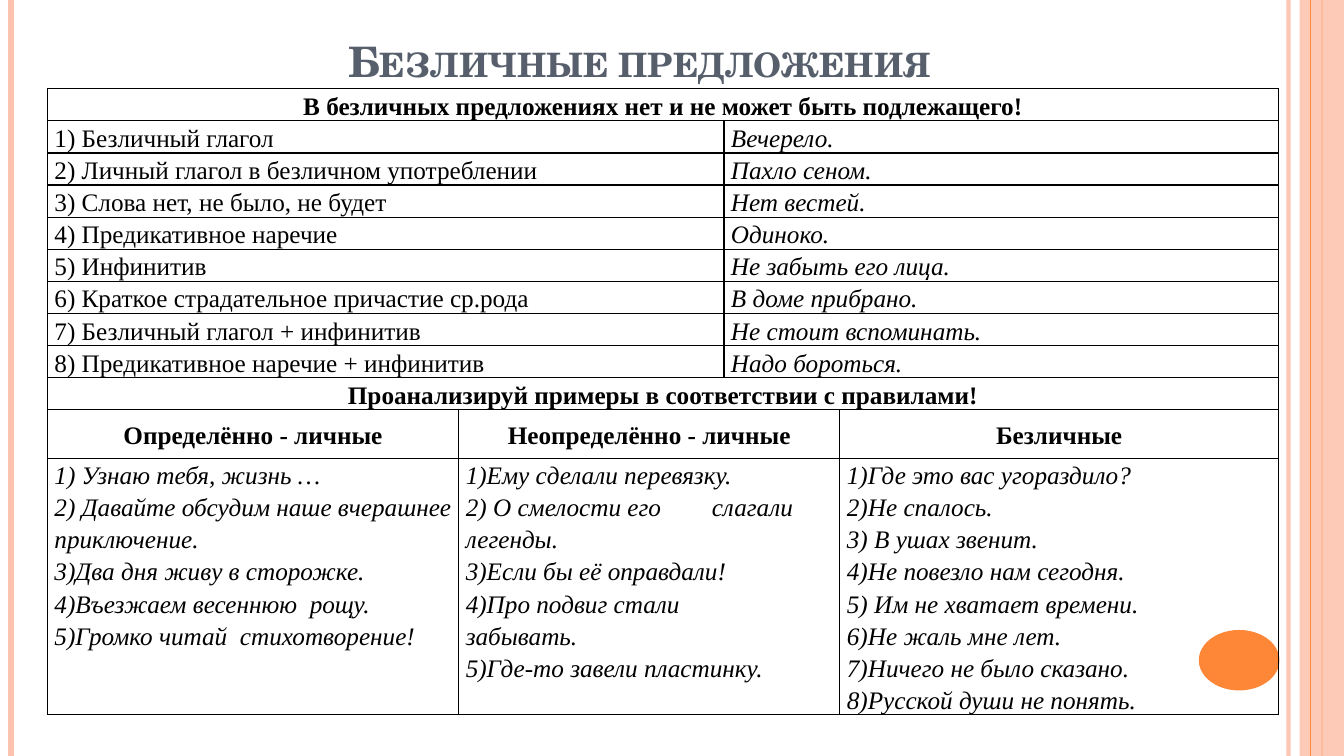
import pptx
import pptx.util
import pptx.dml.color
import pptx.enum.shapes
import pptx.enum.text
import lxml.etree
from pptx.util import Inches

NS = "http://schemas.openxmlformats.org/drawingml/2006/main"
ALIGN = pptx.enum.text.PP_ALIGN
ANCHOR = pptx.enum.text.MSO_ANCHOR
SHAPE = pptx.enum.shapes.MSO_SHAPE
PEACH, ORANGE = "FEC3AE", "FE8637"


def paint(color_format, value, opacity=100):
    color_format.rgb = pptx.dml.color.RGBColor.from_string(value)
    if opacity < 100:
        color = color_format._xFill.find(f"{{{NS}}}srgbClr")
        lxml.etree.SubElement(color, f"{{{NS}}}alpha", val=str(opacity * 1000))


def fill_cell(cell, lines, bold=False, italic=False, centered=False):
    cell.text_frame.text = "\n".join(lines)
    for para in cell.text_frame.paragraphs:
        para.line_spacing = 1.15
        para.alignment = ALIGN.CENTER if centered else ALIGN.LEFT
        if "\t" in para.text:
            tabs = lxml.etree.SubElement(para._p.get_or_add_pPr(), f"{{{NS}}}tabLst")
            lxml.etree.SubElement(tabs, f"{{{NS}}}tab", pos=str(Inches(2.44)), algn="l")
        for span in para.runs:
            span.font.name = "Times New Roman"
            span.font.size = pptx.util.Pt(18)
            span.font.bold = bold
            span.font.italic = italic
            paint(span.font.color, "000000")


deck = pptx.Presentation()
deck.slide_width = Inches(13.33)
deck.slide_height = Inches(7.5)
page = deck.slides.add_slide(deck.slide_layouts[5])

stripes = [
    (12.78, PEACH, 3, 93),
    (0.11, PEACH, 4.5, 100),
    (13.11, ORANGE, 1.5, 100),
    (13, ORANGE, 0.75, 100),
]
for x, color, width, opacity in stripes:
    stripe = page.shapes.add_connector(
        pptx.enum.shapes.MSO_CONNECTOR.STRAIGHT, Inches(x), 0, Inches(x), Inches(7.5)
    )
    stripe.line.width = pptx.util.Pt(width)
    stripe.line.fill.solid()
    stripe.line.color.rgb = pptx.dml.color.RGBColor.from_string(color)
    if opacity < 100:
        stripe_color = stripe._element.spPr.find(f".//{{{NS}}}srgbClr")
        lxml.etree.SubElement(stripe_color, f"{{{NS}}}alpha", val=str(opacity * 1000))
    lxml.etree.SubElement(stripe._element.spPr, f"{{{NS}}}effectLst")

decorations = [
    (SHAPE.RECTANGLE, 12.89, 0, 0.44, 7.5, PEACH, 87),
    (SHAPE.OVAL, 11.89, 6.25, 0.8, 0.6, ORANGE, 100),
]
for kind, left, top, width, height, color, opacity in decorations:
    decoration = page.shapes.add_shape(
        kind, Inches(left), Inches(top), Inches(width), Inches(height)
    )
    decoration.shadow.inherit = False
    decoration.line.fill.background()
    decoration.fill.solid()
    decoration.fill.fore_color.rgb = pptx.dml.color.RGBColor.from_string(color)
    if opacity < 100:
        shape_color = decoration._element.spPr.find(f".//{{{NS}}}srgbClr")
        lxml.etree.SubElement(shape_color, f"{{{NS}}}alpha", val=str(opacity * 1000))
last_stripe = page.shapes[4]._element
last_stripe.getparent().insert(-1, last_stripe)

title = page.shapes.title
title.left, title.top = Inches(0.9), Inches(0.26)
title.width, title.height = Inches(10.89), Inches(0.64)
title.text_frame.text = "Безличные предложения"
title.text_frame.vertical_anchor = ANCHOR.BOTTOM
title_para = title.text_frame.paragraphs[0]
title_para.alignment = ALIGN.CENTER
title_span = title_para.runs[0]
title_span.font.name = "TeX Gyre Schola"
title_span.font.size = pptx.util.Pt(30)
title_span.font.bold = True
paint(title_span.font.color, "575F6D")
title_span._r.get_or_add_rPr().set("cap", "small")

rules = [
    ("1) Безличный глагол", "Вечерело."),
    ("2) Личный глагол в безличном употреблении", "Пахло сеном."),
    ("3) Слова нет, не было, не будет", "Нет вестей."),
    ("4) Предикативное наречие", "Одиноко."),
    ("5) Инфинитив", "Не забыть его лица."),
    ("6) Краткое страдательное причастие ср.рода", "В доме прибрано."),
    ("7) Безличный глагол + инфинитив", "Не стоит вспоминать."),
    ("8) Предикативное наречие + инфинитив", "Надо бороться."),
]
examples = [
    (0, "Определённо - личные", [
        "1) Узнаю тебя, жизнь …",
        "2) Давайте обсудим наше вчерашнее приключение.",
        "3)Два дня живу в сторожке.",
        "4)Въезжаем весеннюю  рощу.",
        "5)Громко читай  стихотворение!",
    ]),
    (1, "Неопределённо - личные", [
        "1)Ему сделали перевязку.",
        "2) О смелости его\tслагали легенды.",
        "3)Если бы её оправдали!",
        "4)Про подвиг стали\vзабывать.",
        "5)Где-то завели пластинку.",
    ]),
    (3, "Безличные", [
        "1)Где это вас угораздило?",
        "2)Не спалось.",
        "3) В ушах звенит.",
        "4)Не повезло нам сегодня.",
        "5) Им не хватает времени.",
        "6)Не жаль мне лет.",
        "7)Ничего не было сказано.",
        "8)Русской души не понять.",
    ]),
]
column_widths = [4.08, 2.63, 1.15, 4.35]
row_heights = [0.24] * 10 + [0.48, 2.39]
frame = page.shapes.add_table(
    len(row_heights), len(column_widths), Inches(0.47), Inches(0.88),
    Inches(sum(column_widths)), Inches(sum(row_heights)),
)
table = frame.table
table.first_row = False
table.horz_banding = False
for column, width in zip(table.columns, column_widths):
    column.width = Inches(width)
for row, height in zip(table.rows, row_heights):
    row.height = Inches(height)

for cell in table.iter_cells():
    cell.margin_left = cell.margin_right = Inches(0.07)
    cell.margin_top = cell.margin_bottom = 0
    cell.fill.background()
    for index, side in enumerate(["lnL", "lnR", "lnT", "lnB"]):
        border = lxml.etree.Element(f"{{{NS}}}{side}", w=str(pptx.util.Pt(1)))
        solid = lxml.etree.SubElement(border, f"{{{NS}}}solidFill")
        lxml.etree.SubElement(solid, f"{{{NS}}}srgbClr", val="000000")
        cell._tc.get_or_add_tcPr().insert(index, border)

headings = [
    (0, "В безличных предложениях нет и не может быть подлежащего!"),
    (9, "Проанализируй примеры в соответствии с правилами!"),
]
for row, heading in headings:
    table.cell(row, 0).merge(table.cell(row, 3))
    fill_cell(table.cell(row, 0), [heading], bold=True, centered=True)

for row, (rule, sample) in enumerate(rules, 1):
    table.cell(row, 0).merge(table.cell(row, 1))
    table.cell(row, 2).merge(table.cell(row, 3))
    fill_cell(table.cell(row, 0), [rule])
    fill_cell(table.cell(row, 2), [sample], italic=True)

for row in (10, 11):
    table.cell(row, 1).merge(table.cell(row, 2))
for column, heading, sentences in examples:
    fill_cell(table.cell(10, column), [heading], bold=True, centered=True)
    table.cell(10, column).vertical_anchor = ANCHOR.MIDDLE
    fill_cell(table.cell(11, column), sentences, italic=True)

deck.save("out.pptx")
